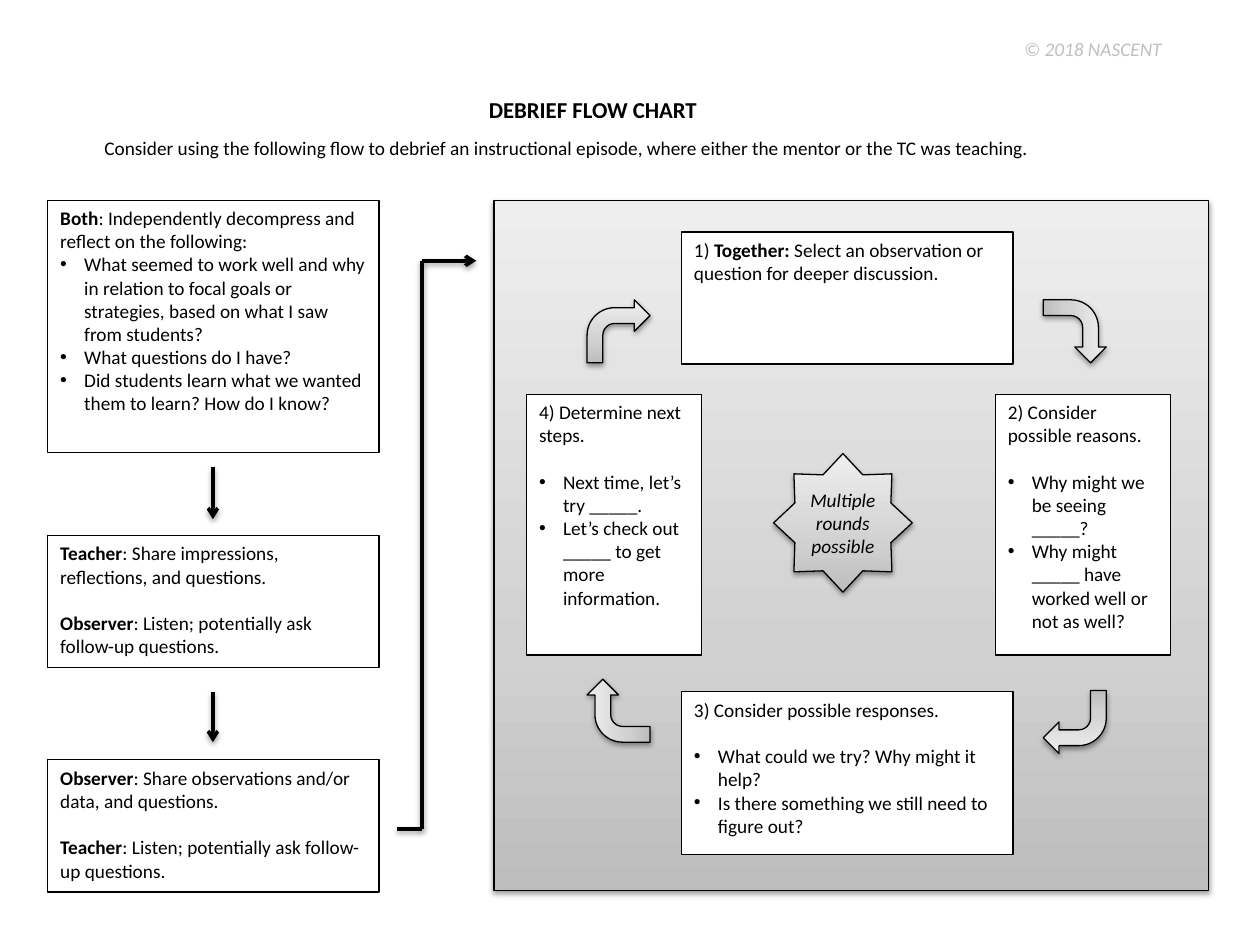
from copy import deepcopy
from dataclasses import dataclass

from lxml import etree
from pptx import Presentation
from pptx.dml.color import RGBColor
from pptx.enum.shapes import MSO_CONNECTOR, MSO_SHAPE
from pptx.enum.text import MSO_ANCHOR, MSO_AUTO_SIZE, PP_ALIGN
from pptx.oxml.ns import qn
from pptx.util import Inches, Pt

RECT = MSO_SHAPE.RECTANGLE
BENT = MSO_SHAPE.BENT_ARROW
STAR = MSO_SHAPE.STAR_8_POINT
STRAIGHT = MSO_CONNECTOR.STRAIGHT
TOP, MIDDLE = MSO_ANCHOR.TOP, MSO_ANCHOR.MIDDLE
LEFT, CENTER = PP_ALIGN.LEFT, PP_ALIGN.CENTER
NO_FIT = MSO_AUTO_SIZE.NONE

FONT = "Calibri"
BLACK, WHITE, GREY = "000000", "FFFFFF", "BFBFBF"
GRADIENT = [(0, "BDBDBD"), (0.35, "D1D1D1"), (1, "EEEEEE")]
SIZE = 11
LINE_GAP = 13.4
INDENT = 0.19


@dataclass
class Para:
    text: str
    bullet: bool = False
    gap: bool = False


@dataclass
class Box:
    x: float
    y: float
    w: float
    h: float
    paras: list[Para]


@dataclass
class Line:
    x1: float
    y1: float
    x2: float
    y2: float
    arrow: bool = True


@dataclass
class Turn:
    x: float
    y: float
    angle: int


def rgb(color: str) -> RGBColor:
    return RGBColor.from_string(color)


def style(r, size=SIZE, color=BLACK, bold=False, italic=False) -> None:
    f = r.font
    f.name, f.size, f.bold, f.italic = FONT, Pt(size), bold, italic
    f.color.rgb = rgb(color)


def add_shadow(sp) -> None:
    effects = etree.SubElement(sp._element.spPr, qn("a:effectLst"))
    shadow = etree.SubElement(effects, qn("a:outerShdw"), blurRad=str(Pt(3.1)),
                              dist=str(Pt(1.6)), dir="5400000", rotWithShape="0")
    color = etree.SubElement(shadow, qn("a:srgbClr"), val=BLACK)
    etree.SubElement(color, qn("a:alpha"), val="38000")


def add_shape(s, kind, x: float, y: float, w: float, h: float):
    sp = s.shapes.add_shape(kind, Inches(x), Inches(y), Inches(w), Inches(h))
    sp.line.color.rgb = rgb(BLACK)
    sp.line.width = Pt(0.75)
    return sp


def add_shaded(s, kind, x: float, y: float, w: float, h: float):
    sp = add_shape(s, kind, x, y, w, h)
    sp.fill.gradient()
    sp.fill.gradient_angle = 90
    stops = sp._element.spPr.find(qn("a:gradFill")).find(qn("a:gsLst"))
    stops.append(deepcopy(stops[0]))
    for stop, (position, color) in zip(sp.fill.gradient_stops, GRADIENT):
        stop.position = position
        stop.color.rgb = rgb(color)
    add_shadow(sp)
    return sp


def add_bullet(p) -> None:
    pPr = p._p.get_or_add_pPr()
    pPr.set("marL", str(Inches(INDENT)))
    pPr.set("indent", str(-Inches(INDENT)))
    etree.SubElement(pPr, qn("a:buFont"), typeface="Arial")
    etree.SubElement(pPr, qn("a:buChar"), char="•")


def add_box(s, box: Box) -> None:
    sp = add_shape(s, RECT, box.x, box.y, box.w, box.h)
    sp.fill.solid()
    sp.fill.fore_color.rgb = rgb(WHITE)
    sp.shadow.inherit = False
    tf = sp.text_frame
    tf.word_wrap = True
    tf.vertical_anchor = TOP
    for i, para in enumerate(box.paras):
        p = tf.add_paragraph() if i else tf.paragraphs[0]
        p.alignment = LEFT
        if para.gap:
            p.space_before = Pt(LINE_GAP)
        if para.bullet:
            add_bullet(p)
        for j, part in enumerate(para.text.split("**")):
            if part:
                r = p.add_run()
                r.text = part
                style(r, bold=j % 2 == 1)


def add_line(s, line: Line) -> None:
    cn = s.shapes.add_connector(STRAIGHT, Inches(line.x1), Inches(line.y1),
                                Inches(line.x2), Inches(line.y2))
    cn.line.color.rgb = rgb(BLACK)
    cn.line.width = Pt(2)
    if line.arrow:
        etree.SubElement(cn.line._get_or_add_ln(), qn("a:tailEnd"), type="arrow")
    add_shadow(cn)


def add_label(s, text: str, x: float, y: float, w: float, h: float, color=BLACK, italic=False) -> None:
    tf = s.shapes.add_textbox(Inches(x), Inches(y), Inches(w), Inches(h)).text_frame
    tf.word_wrap = False
    tf.text = text
    style(tf.paragraphs[0].runs[0], color=color, italic=italic)


def add_title(s, text: str) -> None:
    sp = s.shapes.title
    sp.left, sp.top, sp.width, sp.height = Inches(3.56), Inches(0.71), Inches(2.28), Inches(0.32)
    sp.left = Inches(3.56)
    tf = sp.text_frame
    tf.text = text
    tf.auto_size = NO_FIT
    tf.word_wrap = False
    tf.vertical_anchor = TOP
    tf.paragraphs[0].alignment = LEFT
    sp.left = Inches(3.78)
    style(tf.paragraphs[0].runs[0], size=13, bold=True)


STEPS = [
    Box(0.38, 1.59, 2.63, 2, [
        Para("**Both**: Independently decompress and reflect on the following:"),
        Para("What seemed to work well and why in relation to focal goals or strategies, "
             "based on what I saw from students?", True),
        Para("What questions do I have?", True),
        Para("Did students learn what we wanted them to learn? How do I know?", True)]),
    Box(0.38, 4.25, 2.63, 1.05, [
        Para("**Teacher**: Share impressions, reflections, and questions."),
        Para("**Observer**: Listen; potentially ask follow-up questions.", gap=True)]),
    Box(0.38, 6.03, 2.63, 1.05, [
        Para("**Observer**: Share observations and/or data, and questions."),
        Para("**Teacher**: Listen; potentially ask follow-up questions.", gap=True)]),
]
CYCLE = [
    Box(5.41, 1.84, 2.63, 1.05, [
        Para("1) **Together:** Select an observation or question for deeper discussion.")]),
    Box(7.9, 3.13, 1.39, 2.07, [
        Para("2) Consider possible reasons."),
        Para("Why might we be seeing _____?", True, True),
        Para("Why might _____ have worked well or not as well?", True)]),
    Box(5.41, 5.49, 2.63, 1.29, [
        Para("3) Consider possible responses."),
        Para("What could we try? Why might it help?", True, True),
        Para("Is there something we still need to figure out?", True)]),
    Box(4.18, 3.13, 1.39, 2.07, [
        Para("4) Determine next steps."),
        Para("Next time, let’s try _____.", True, True),
        Para("Let’s check out _____ to get more information.", True)]),
]
LINES = [
    Line(1.69, 3.71, 1.69, 4.12),
    Line(1.69, 5.49, 1.69, 5.89),
    Line(3.15, 6.58, 3.35, 6.58, False),
    Line(3.35, 6.58, 3.35, 2.07, False),
    Line(3.35, 2.07, 3.78, 2.07),
]
TURNS = [Turn(4.66, 2.38, 0), Turn(8.28, 2.38, 90), Turn(8.28, 5.48, 180), Turn(4.66, 5.39, 270)]


def main() -> None:
    prs = Presentation()
    prs.slide_width, prs.slide_height = Inches(10), Inches(7.5)
    s = prs.slides.add_slide(prs.slide_layouts[5])
    add_title(s, "DEBRIEF FLOW CHART")
    add_label(s, "© 2018 NASCENT", 8.03, 0.25, 1.53, 0.29, GREY, True)
    add_label(s, "Consider using the following flow to debrief an instructional episode, "
              "where either the mentor or the TC was teaching.", 0.73, 1.03, 8.18, 0.29)
    add_shaded(s, RECT, 3.92, 1.59, 5.67, 5.48)
    for box in STEPS + CYCLE:
        add_box(s, box)
    for line in LINES:
        add_line(s, line)
    for turn in TURNS:
        add_shaded(s, BENT, turn.x, turn.y, 0.5, 0.5).rotation = turn.angle
    tf = add_shaded(s, STAR, 6.14, 3.6, 1.1, 1.1).text_frame
    tf.word_wrap = True
    tf.vertical_anchor = MIDDLE
    tf.text = "Multiple rounds possible"
    tf.paragraphs[0].alignment = CENTER
    style(tf.paragraphs[0].runs[0], italic=True)
    prs.save("out.pptx")


if __name__ == "__main__":
    main()
